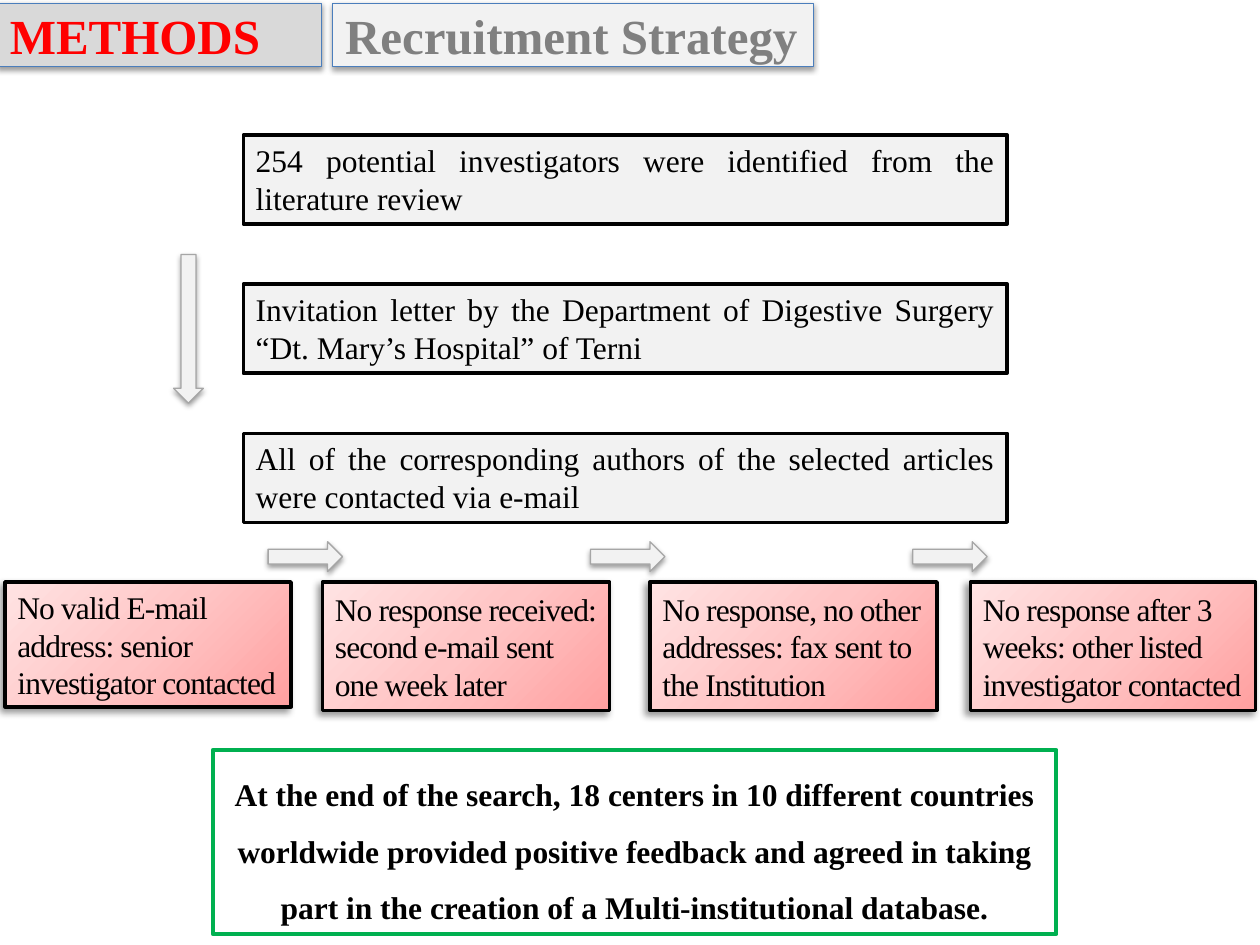
import pptx
import pptx.dml.color
import pptx.enum.shapes
import pptx.enum.text
import pptx.oxml
import pptx.oxml.ns
import pptx.util

Pt = pptx.util.Pt
RGBColor = pptx.dml.color.RGBColor
SHAPE = pptx.enum.shapes.MSO_SHAPE
ALIGN = pptx.enum.text.PP_ALIGN
ANCHOR = pptx.enum.text.MSO_ANCHOR
GROW = pptx.enum.text.MSO_AUTO_SIZE.SHAPE_TO_FIT_TEXT

BLACK = RGBColor(0x00, 0x00, 0x00)
RED = RGBColor(0xFF, 0x00, 0x00)
GREEN = RGBColor(0x00, 0xB0, 0x50)
BLUE = RGBColor(0x4B, 0x7E, 0xBC)
GRAY = RGBColor(0x80, 0x80, 0x80)
MID_GRAY = RGBColor(0xA6, 0xA6, 0xA6)
LIGHT_GRAY = RGBColor(0xD9, 0xD9, 0xD9)
PALE_GRAY = RGBColor(0xF2, 0xF2, 0xF2)

NAMESPACE = pptx.oxml.ns.nsdecls("a")
PINK_GRADIENT = f"""<a:gradFill {NAMESPACE} rotWithShape="1"><a:gsLst>
<a:gs pos="0"><a:srgbClr val="FFA0A0"/></a:gs>
<a:gs pos="50000"><a:srgbClr val="FFC5C5"/></a:gs>
<a:gs pos="100000"><a:srgbClr val="FFE3E3"/></a:gs></a:gsLst>
<a:path path="circle"><a:fillToRect l="100000" t="100000"/></a:path>
</a:gradFill>"""
# Opacity in percent, blur and distance in points, direction in degrees
SOFT_SHADOW = (38, 3.1, 1.6, 90)
CORNER_SHADOW = (40, 4, 3, 135)


def add_block(kind, box, fill, line, line_width, shadow=None):
    """Add a shape; box is left, top, width, height in points."""
    block = slide.shapes.add_shape(kind, *[Pt(length) for length in box])
    block.shadow.inherit = False
    if fill is None:
        block.fill.background()
    else:
        block.fill.solid()
        block.fill.fore_color.rgb = fill
    block.line.color.rgb = line
    block.line.width = Pt(line_width)
    if shadow:
        opacity, blur, distance, direction = shadow
        effects = block._element.spPr.find(pptx.oxml.ns.qn("a:effectLst"))
        effects.append(pptx.oxml.parse_xml(
            f'<a:outerShdw {NAMESPACE} blurRad="{Pt(blur)}" dist="{Pt(distance)}" '
            f'dir="{direction * 60000}" rotWithShape="0"><a:srgbClr val="000000">'
            f'<a:alpha val="{opacity * 1000}"/></a:srgbClr></a:outerShdw>'))
    return block


def write(block, text, size, color, align, anchor, bold=False):
    frame = block.text_frame
    frame.word_wrap = True
    frame.vertical_anchor = anchor
    paragraph = frame.paragraphs[0]
    paragraph.text = text
    paragraph.alignment = align
    paragraph.font.name = "Times New Roman"
    paragraph.font.size = Pt(size)
    paragraph.font.bold = bold
    paragraph.font.color.rgb = color
    return paragraph


presentation = pptx.Presentation()
presentation.slide_width = Pt(720)
presentation.slide_height = Pt(540)
slide = presentation.slides.add_slide(presentation.slide_layouts[6])

# Outcome of the search
outcome = add_block(SHAPE.RECTANGLE, (121.7, 428.5, 482, 105.3), None, GREEN, 2.25)
conclusion = write(
    outcome,
    "At the end of the search, 18 centers in 10 different countries worldwide "
    "provided positive feedback and agreed in taking part in the creation of a "
    "Multi-institutional database.",
    18, BLACK, ALIGN.CENTER, ANCHOR.TOP, bold=True)
conclusion.line_spacing = 1.5
outcome.text_frame.auto_size = GROW

# Recruitment steps, from top to bottom
steps = [
    "254 potential investigators were identified from the literature review",
    "Invitation letter by the Department of Digestive Surgery “Dt. Mary’s Hospital” of Terni",
    "All of the corresponding authors of the selected articles were contacted via e-mail",
]
for row, text in enumerate(steps):
    step = add_block(SHAPE.RECTANGLE, (139, 77.2 + 85.2 * row, 436.5, 50.9),
                     PALE_GRAY, BLACK, 2)
    write(step, text, 18, BLACK, ALIGN.JUSTIFY, ANCHOR.TOP)
    step.text_frame.auto_size = GROW

# Follow-up when there is no answer: left, width, height, text
follow_ups = [
    (2.9, 163.5, 71.3, "No valid E-mail address: senior investigator contacted"),
    (184.3, 164, 73.4, "No response received: second e-mail sent one week later"),
    (371.5, 164, 73.4, "No response, no other addresses: fax sent to the Institution"),
    (554.5, 162.9, 73.4, "No response after 3 weeks: other listed investigator contacted"),
]
for left, width, height, text in follow_ups:
    follow_up = add_block(SHAPE.RECTANGLE, (left, 332.6, width, height),
                          PALE_GRAY, BLACK, 2, CORNER_SHADOW)
    properties = follow_up._element.spPr
    properties.replace(properties.find(pptx.oxml.ns.qn("a:solidFill")),
                       pptx.oxml.parse_xml(PINK_GRADIENT))
    paragraph = write(follow_up, text, 18, BLACK, ALIGN.LEFT, ANCHOR.MIDDLE)
    paragraph.runs[0]._r.get_or_add_rPr().set("spc", "-50")

# Headings
headings = [
    ("METHODS", -1.4, 185, LIGHT_GRAY, RED, ALIGN.LEFT),
    ("Recruitment Strategy", 190.1, 275, PALE_GRAY, GRAY, ALIGN.JUSTIFY),
]
for text, left, width, fill, color, align in headings:
    heading = add_block(SHAPE.RECTANGLE, (left, 1.9, width, 36), fill, BLUE, 0.75,
                        SOFT_SHADOW)
    write(heading, text, 28, color, align, ANCHOR.MIDDLE, bold=True)

# Arrows between follow-ups, then the one down the steps
for column in range(3):
    add_block(SHAPE.RIGHT_ARROW, (153.2 + 184.2 * column, 309.6, 42.5, 17),
              PALE_GRAY, MID_GRAY, 0.75, SOFT_SHADOW)
down_arrow = add_block(SHAPE.RIGHT_ARROW, (65.2, 179.4, 85, 17),
                       PALE_GRAY, MID_GRAY, 0.75, SOFT_SHADOW)
down_arrow.rotation = 90

presentation.save("out.pptx")
